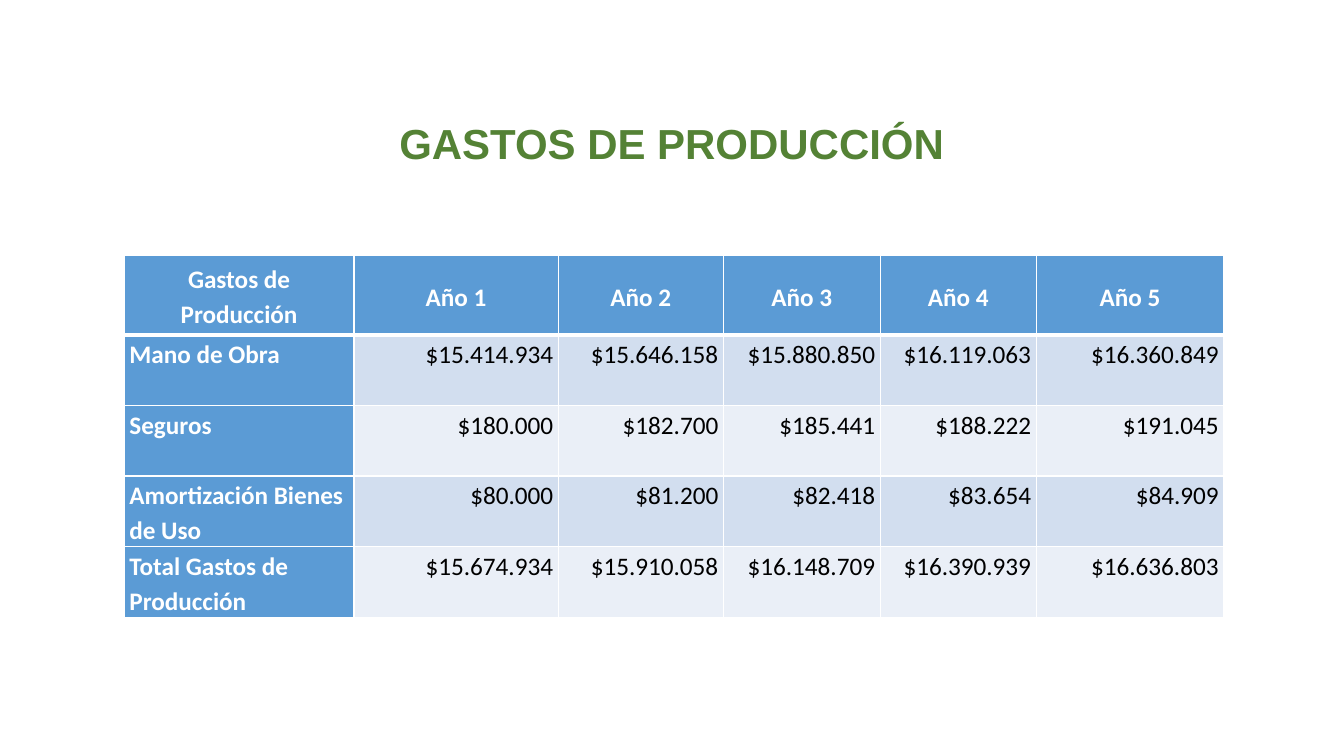
from dataclasses import dataclass

from lxml import etree
from pptx import Presentation
from pptx.dml.color import RGBColor
from pptx.enum.text import MSO_ANCHOR, PP_ALIGN
from pptx.oxml.ns import qn
from pptx.util import Pt

LEFT, CENTER, RIGHT = PP_ALIGN.LEFT, PP_ALIGN.CENTER, PP_ALIGN.RIGHT
TOP, MIDDLE = MSO_ANCHOR.TOP, MSO_ANCHOR.MIDDLE


@dataclass(frozen=True)
class Theme:
    title_font: str = "Arial"
    table_font: str = "Calibri"
    title_size: int = 30
    table_size: int = 18
    title: str = "548235"
    header: str = "5B9BD5"
    bands: tuple = ("D2DEEF", "EAEFF7")
    light: str = "FFFFFF"
    dark: str = "000000"


theme = Theme()


def format_text(frame, font_name, size, color, bold, alignment, spacing):
    para = frame.paragraphs[0]
    para.alignment = alignment
    para.line_spacing = spacing
    font = para.runs[0].font
    font.name, font.size, font.bold = font_name, Pt(size), bold
    font.color.rgb = RGBColor.from_string(color)


def set_borders(cell, bottom_width, top_width):
    """Draw light borders; lines must precede the fill in the cell properties."""
    properties = cell._tc.get_or_add_tcPr()
    widths = {"a:lnL": 1, "a:lnR": 1, "a:lnT": top_width, "a:lnB": bottom_width}
    for position, (tag, width) in enumerate(widths.items()):
        line = etree.Element(qn(tag), w=str(Pt(width)))
        fill = etree.SubElement(line, qn("a:solidFill"))
        etree.SubElement(fill, qn("a:srgbClr"), val=theme.light)
        properties.insert(position, line)


deck = Presentation()
deck.slide_width, deck.slide_height = Pt(960), Pt(540)
page = deck.slides.add_slide(deck.slide_layouts[6])

title = page.shapes.add_textbox(Pt(66), Pt(76.4), Pt(828), Pt(56))
title.text_frame.word_wrap = True
title.text_frame.vertical_anchor = MIDDLE
title.text_frame.text = "GASTOS DE PRODUCCIÓN"
format_text(title.text_frame, theme.title_font, theme.title_size,
            theme.title, True, CENTER, 0.9)

expenses = [
    ["Gastos de Producción"] + [f"Año {year}" for year in range(1, 6)],
    ["Mano de Obra", "$15.414.934", "$15.646.158", "$15.880.850", "$16.119.063", "$16.360.849"],
    ["Seguros", "$180.000", "$182.700", "$185.441", "$188.222", "$191.045"],
    ["Amortización Bienes de Uso", "$80.000", "$81.200", "$82.418", "$83.654", "$84.909"],
    ["Total Gastos de Producción", "$15.674.934", "$15.910.058", "$16.148.709", "$16.390.939",
     "$16.636.803"],
]
column_widths = [164, 146, 118, 112, 111.4, 134]
row_heights = [56.8] + [50.4] * 4

table = page.shapes.add_table(
    len(row_heights), len(column_widths), Pt(88.8), Pt(182.4),
    Pt(sum(column_widths)), Pt(sum(row_heights))).table
for column, width in zip(table.columns, column_widths):
    column.width = Pt(width)
for row, height in zip(table.rows, row_heights):
    row.height = Pt(height)

for row_index, values in enumerate(expenses):
    for column_index, value in enumerate(values):
        is_header = row_index == 0
        is_label = is_header or column_index == 0
        cell = table.cell(row_index, column_index)
        cell.margin_left = cell.margin_right = Pt(3.6)
        cell.margin_top = cell.margin_bottom = Pt(0)
        cell.vertical_anchor = MIDDLE if is_header else TOP
        cell.fill.solid()
        cell.fill.fore_color.rgb = RGBColor.from_string(
            theme.header if is_label else theme.bands[(row_index - 1) % 2])
        set_borders(cell, 3 if is_header else 1, 3 if row_index == 1 else 1)
        cell.text_frame.text = value
        alignment = CENTER if is_header else LEFT if is_label else RIGHT
        format_text(cell.text_frame, theme.table_font, theme.table_size,
                    theme.light if is_label else theme.dark, is_label, alignment, 1.15)

deck.save("out.pptx")
